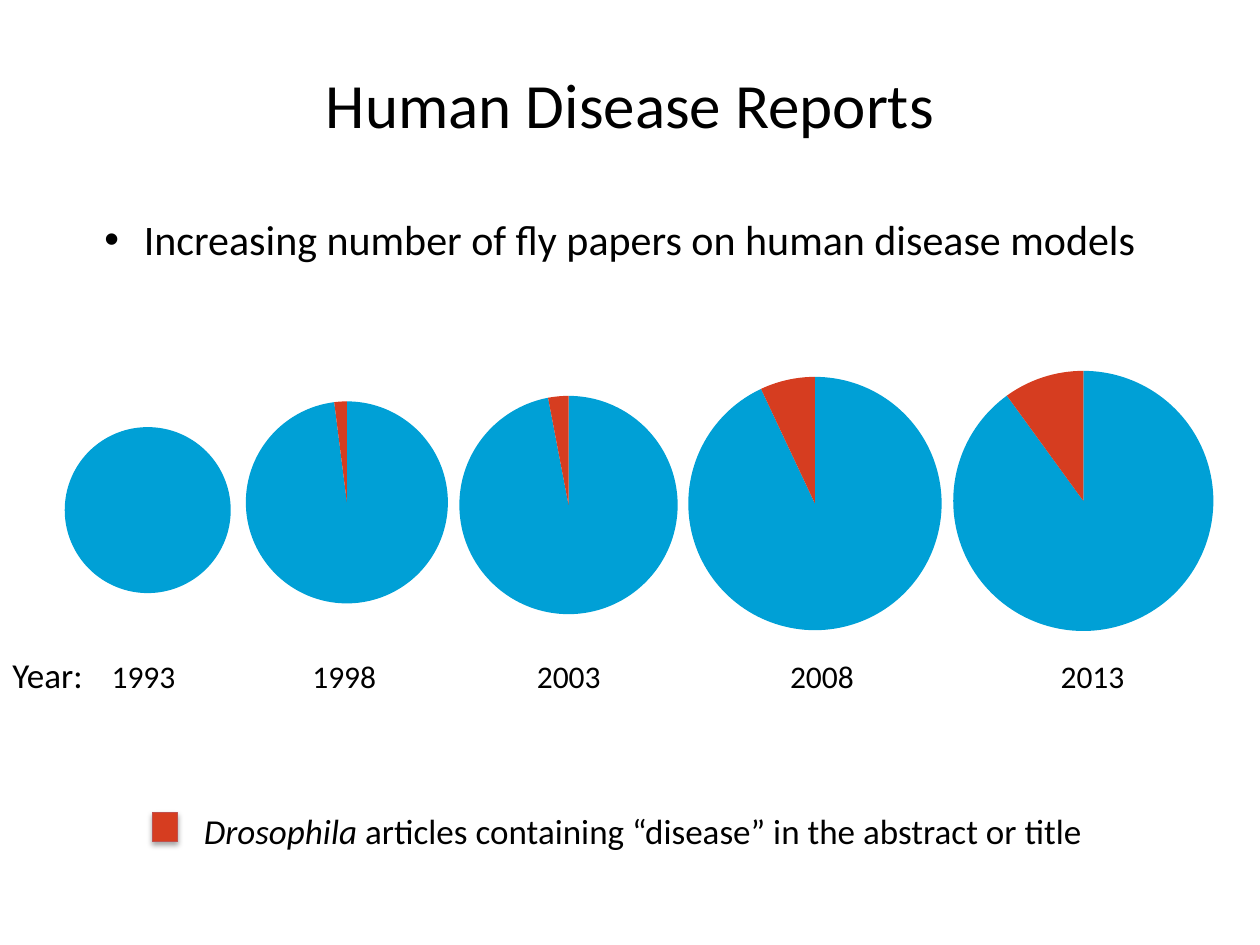
"""Build the Human Disease Reports slide with one pie chart per year."""
from dataclasses import dataclass

import pptx
import pptx.chart.data
import pptx.dml.color
import pptx.enum.chart
import pptx.enum.shapes
import pptx.enum.text
import pptx.oxml
import pptx.oxml.ns
import pptx.slide
import pptx.util

Pt = pptx.util.Pt
Box = tuple[float, float, float, float]
BLACK = pptx.dml.color.RGBColor(0x00, 0x00, 0x00)
BLUE = pptx.dml.color.RGBColor(0x00, 0xA0, 0xD6)
RED = pptx.dml.color.RGBColor(0xD6, 0x3D, 0x20)
BORDER_RED = pptx.dml.color.RGBColor(0xC0, 0x50, 0x4D)
FONT = "Calibri"


@dataclass(frozen=True)
class YearPie:
    year: str
    disease_percent: int
    frame: Box
    plot: Box
    label_left: float


PIES = (
    YearPie("2013", 10, (537.1, 183.8, 204.5, 195.1), (7.6, 27.1, 148.7, 150.8), 599),
    YearPie("2008", 7, (315.2, 210.2, 277.9, 160.6), (78.1, 4.2, 144.8, 146.8), 444.4),
    YearPie("1993", 0, (34.7, 235.3, 97.2, 144), (2.3, 3.6, 94.9, 105.3), 56.7),
    YearPie("2003", 3, (202.8, 201, 277.9, 160.6), (59.7, 24.3, 124.8, 126.7), 299.7),
    YearPie("1998", 2, (122.4, 216.6, 160.6, 145.4), (18.1, 11.9, 115.5, 117.3), 171.4),
)


def points(box: Box) -> list[pptx.util.Length]:
    return [Pt(length) for length in box]


def xml_element(tag: str, attributes: str = "", content: str = ""):
    namespaces = pptx.oxml.ns.nsdecls("a", "c")
    return pptx.oxml.parse_xml(f"<{tag} {namespaces} {attributes}>{content}</{tag}>")


def add_text(
    slide: pptx.slide.Slide,
    text: str,
    *,
    box: Box,
    size: float,
    italic_lead: str = "",
    centered: bool = False,
    bullet: bool = False,
    wrap: bool = True,
) -> None:
    frame = slide.shapes.add_textbox(*points(box)).text_frame
    frame.word_wrap = wrap
    paragraph = frame.paragraphs[0]
    if centered:
        frame.vertical_anchor = pptx.enum.text.MSO_ANCHOR.MIDDLE
        paragraph.alignment = pptx.enum.text.PP_ALIGN.CENTER
    if bullet:
        properties = paragraph._p.get_or_add_pPr()
        properties.set("marL", str(Pt(22.5)))
        properties.set("indent", str(-Pt(22.5)))
        properties.append(xml_element("a:buFont", 'typeface="Arial"'))
        properties.append(xml_element("a:buChar", 'char="•"'))
    for content, italic in ((italic_lead, True), (text, False)):
        if content:
            run = paragraph.add_run()
            run.text = content
            run.font.name = FONT
            run.font.size = Pt(size)
            run.font.italic = italic
            run.font.color.rgb = BLACK


def add_year_pie(slide: pptx.slide.Slide, pie: YearPie) -> None:
    data = pptx.chart.data.CategoryChartData()
    data.categories = ["1", "2"]
    data.add_series("Series 1", (100 - pie.disease_percent, pie.disease_percent))
    chart = slide.shapes.add_chart(
        pptx.enum.chart.XL_CHART_TYPE.PIE, *points(pie.frame), data).chart
    chart.has_title = False
    chart.has_legend = False
    chart.font.name = FONT
    chart.font.size = Pt(10)
    chart.font.color.rgb = BLACK
    for index, color in enumerate((BLUE, RED)):
        point_format = chart.plots[0].series[0].points[index].format
        point_format.fill.solid()
        point_format.fill.fore_color.rgb = color
        point_format.line.fill.background()

    chart_space = chart._chartSpace
    chart_space.find(pptx.oxml.ns.qn("c:chart")).addnext(
        xml_element("c:spPr", content="<a:noFill/><a:ln><a:noFill/></a:ln>"))
    plot_area = next(chart_space.iter(pptx.oxml.ns.qn("c:plotArea")))
    for layout in plot_area.findall(pptx.oxml.ns.qn("c:layout")):
        plot_area.remove(layout)
    modes = '<c:layoutTarget val="inner"/><c:xMode val="edge"/><c:yMode val="edge"/>'
    frame_size = pie.frame[2:] * 2
    places = "".join(
        f'<c:{name} val="{length / whole}"/>'
        for name, length, whole in zip("xywh", pie.plot, frame_size))
    plot_area.insert(0, xml_element(
        "c:layout", content=f"<c:manualLayout>{modes}{places}</c:manualLayout>"))


def add_legend_key(slide: pptx.slide.Slide, box: Box) -> None:
    shape = slide.shapes.add_shape(
        pptx.enum.shapes.MSO_SHAPE.RECTANGLE, *points(box))
    shape.fill.solid()
    shape.fill.fore_color.rgb = RED
    shape.line.color.rgb = BORDER_RED
    shape.line.width = Pt(0.75)
    shape.shadow.inherit = False
    effects = shape._element.spPr.find(pptx.oxml.ns.qn("a:effectLst"))
    effects.append(xml_element(
        "a:outerShdw",
        f'blurRad="{Pt(3.1)}" dist="{Pt(1.8)}" dir="5400000" rotWithShape="0"',
        '<a:srgbClr val="000000"><a:alpha val="35000"/></a:srgbClr>'))


def main() -> None:
    presentation = pptx.Presentation()
    presentation.slide_width, presentation.slide_height = Pt(720), Pt(540)
    slide = presentation.slides.add_slide(presentation.slide_layouts[6])
    add_text(slide, "Human Disease Reports", box=(36, 22, 648, 74.2), size=36, centered=True)
    add_text(slide, "Increasing number of fly papers on human disease models",
             box=(52.6, 118.4, 609.1, 36), size=24, bullet=True, wrap=False)
    for pie in PIES:
        add_year_pie(slide, pie)
    for pie in sorted(PIES, key=lambda item: item.year):
        add_text(slide, pie.year, box=(pie.label_left, 372.2, 53.3, 26.6), size=18)
    add_text(slide, "Year:", box=(0, 369.7, 56.9, 31.7), size=20, wrap=False)
    add_legend_key(slide, (87.1, 464.4, 14.4, 16.6))
    add_text(slide, " articles containing “disease” in the abstract or title",
             box=(109.4, 459, 531.4, 31.7), size=20, italic_lead="Drosophila")
    presentation.save("out.pptx")


if __name__ == "__main__":
    main()
